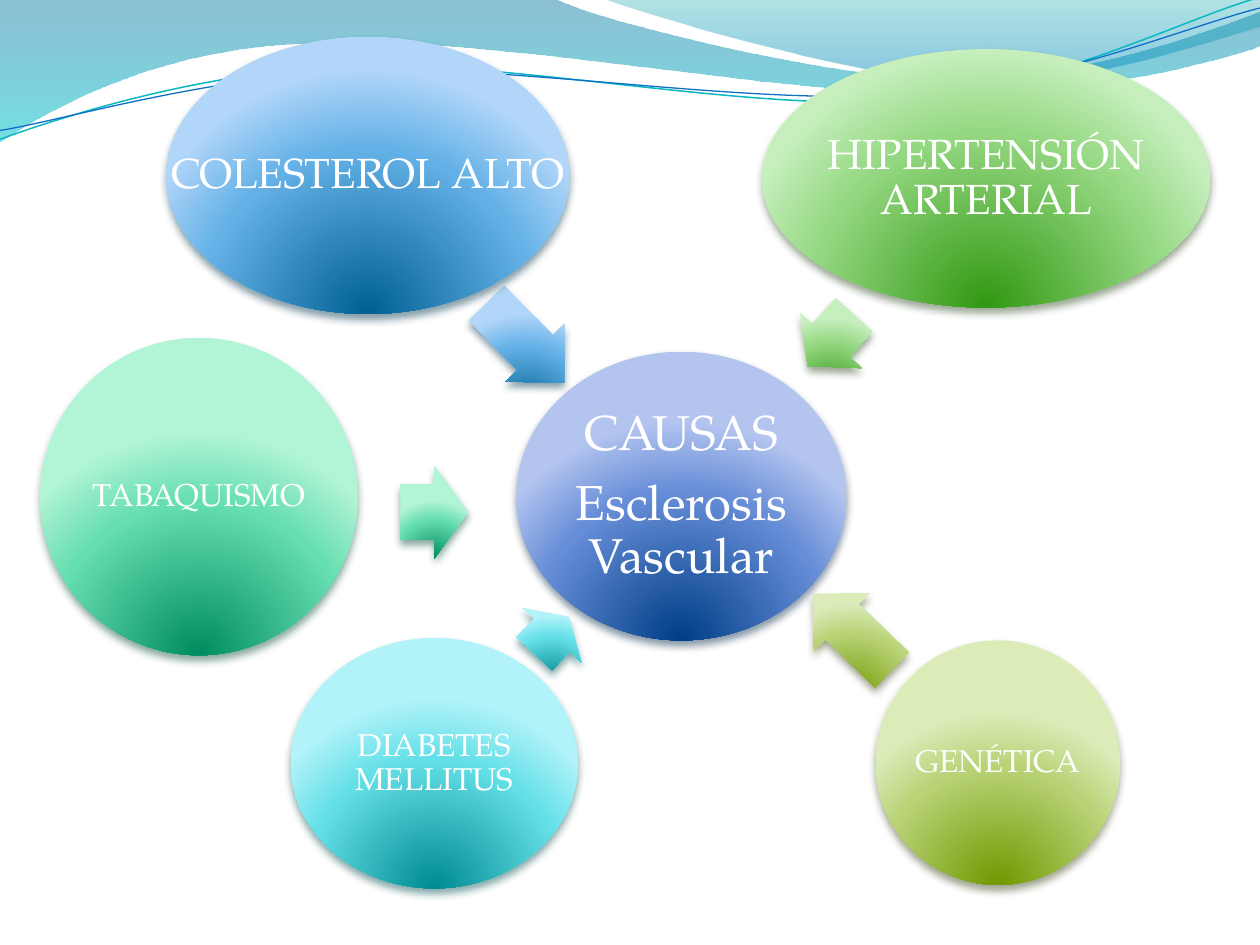
from lxml import etree
from pptx import Presentation
from pptx.dml.color import RGBColor
from pptx.enum.shapes import MSO_SHAPE
from pptx.enum.text import MSO_ANCHOR, PP_ALIGN
from pptx.util import Cm, Pt

OVAL, ARROW = MSO_SHAPE.OVAL, MSO_SHAPE.RIGHT_ARROW
MIDDLE, CENTER = MSO_ANCHOR.MIDDLE, PP_ALIGN.CENTER
NS = "http://schemas.openxmlformats.org/drawingml/2006/main"
FONT = "TeX Gyre Pagella"

LINEAR_DOWN = '<a:lin ang="5400000" scaled="0"/>'
GLOW_FROM_BELOW = ('<a:path path="circle"><a:fillToRect l="50000" t="130000" '
                   'r="50000" b="-30000"/></a:path>')

FRONT_WAVE = [(0, 0), (4.4, -0.01), (4.76, 0.17, 6.64, 0.63, 7.58, 0.63),
              (8.53, 0.63, 9.58, 0.26, 10, 0.09), (10.01, 0.36),
              (9.83, 0.44, 8.7, 0.76, 7.46, 0.75),
              (6.22, 0.75, 3.82, 0.28, 2.57, 0.34),
              (1.29, 0.36, 0.46, 0.83, -0.01, 1.13)]
RIGHT_WAVE = [(4.79, -0.01), (5.09, 0.11, 6.82, 0.62, 7.69, 0.65),
              (8.56, 0.69, 9.61, 0.32, 10, 0.21), (10, 0)]
STRAND_ANGLE = 357.3
TEAL_STRAND = [(-0.02, 0.87), (0.47, 0.72, 1.58, 0.41, 2.78, 0.42),
               (3.96, 0.42, 5.91, 0.93, 7.12, 0.9),
               (8.32, 0.87, 9.4, 0.36, 10, 0.22)]
BLUE_STRAND = [(-0.02, 0.8), (0.46, 0.75, 1.64, 0.45, 2.83, 0.46),
               (4.03, 0.46, 5.96, 0.89, 7.16, 0.85),
               (8.35, 0.83, 9.42, 0.42, 10.02, 0.3)]

BLUE = ("006091", "64B1E7", "B1D6F9", "00374C")
CYAN = ("008A91", "64DFE7", "B1F3F9", "024B4E")
MINT = ("008C60", "65DEB0", "B2F4D6", "044A37")
GREEN = ("319811", "95D882", "C6EFBD", "2B4821")
LIME = ("729800", "B8D275", "DBECB9", "3A4519")
NAVY = ("003D87", "668DD7", "B3C4EF", "042747")

CAUSES = [
    ("COLESTEROL ALTO", 24, BLUE, (2.54, 0, 8.13, 5.59), (8.66, 5.33, 2.24, 1.68), 45.7),
    ("DIABETES MELLITUS", 18, CYAN, (5.05, 12.12, 5.79, 5.05), (9.8, 11.25, 1.02, 1.63), 312.7),
    ("TABAQUISMO", 18, MINT, (0, 6.07, 6.4, 6.4), (7.26, 8.64, 1.37, 1.88), 359.9),
    ("HIPERTENSIÓN ARTERIAL", 24, GREEN, (14.55, 0.25, 9.04, 5.21), (15.24, 5.28, 1.4, 1.68), 132),
    ("GENÉTICA", 18, LIME, (16.84, 12.17, 4.93, 4.93), (15.27, 11.18, 2.21, 1.63), 224),
]


def color(hex_value):
    return RGBColor.from_string(hex_value)


def fill_gradient(shape, stops, direction):
    stop_xml = "".join(
        f'<a:gs pos="{position * 1000}"><a:srgbClr val="{hex_value}">'
        f'<a:alpha val="{alpha * 1000}"/></a:srgbClr></a:gs>'
        for position, hex_value, alpha in stops)
    gradient = etree.fromstring(
        f'<a:gradFill xmlns:a="{NS}" rotWithShape="0">'
        f'<a:gsLst>{stop_xml}</a:gsLst>{direction}</a:gradFill>')
    shape.fill.background()
    properties = shape._element.spPr
    properties.replace(properties.find(f"{{{NS}}}noFill"), gradient)


def cast_shadow(shape, hex_value):
    shape.shadow.inherit = False
    effects = shape._element.spPr.find(f"{{{NS}}}effectLst")
    effects.append(etree.fromstring(
        f'<a:outerShdw xmlns:a="{NS}" blurRad="{Pt(4.5)}" dist="{Pt(3)}" '
        f'dir="5400000" rotWithShape="0"><a:srgbClr val="{hex_value}">'
        '<a:alpha val="48000"/></a:srgbClr></a:outerShdw>'))


def bend_lines(curve, segments):
    lines = iter(list(curve._element.iter(f"{{{NS}}}lnTo")))
    for segment in segments[1:]:
        first = next(lines)
        if len(segment) == 6:
            bend = etree.Element(f"{{{NS}}}cubicBezTo")
            first.addprevious(bend)
            for line in (first, next(lines), next(lines)):
                bend.append(line[0])
                line.getparent().remove(line)


def add_curve(slide, box, segments, close):
    left, top, width = box
    points = [(Cm(left + segment[i] * width / 10), Cm(top + segment[i + 1] * width / 10))
              for segment in segments for i in range(0, len(segment), 2)]
    builder = slide.shapes.build_freeform(*points[0])
    builder.add_line_segments(points[1:], close=close)
    curve = builder.convert_to_shape()
    bend_lines(curve, segments)
    curve.shadow.inherit = False
    return curve


def add_waves(slide, box):
    for segments, stops in (
            (FRONT_WAVE, [(0, "0074A1", 45), (100, "00C6CF", 55)]),
            (RIGHT_WAVE, [(0, "00A1A9", 30), (80, "008BBF", 45)])):
        wave = add_curve(slide, box, segments, True)
        fill_gradient(wave, stops, LINEAR_DOWN)
        wave.line.fill.background()
    for segments, hex_value, weight in ((TEAL_STRAND, "0AB8BF", 0.85),
                                        (BLUE_STRAND, "0F6FC6", 0.75)):
        strand = add_curve(slide, box, segments, False)
        strand.rotation = STRAND_ANGLE
        strand.fill.background()
        strand.line.color.rgb = color(hex_value)
        strand.line.width = Pt(weight)


def place(origin, box):
    left, top, width, height = box
    return Cm(origin[0] + left), Cm(origin[1] + top), Cm(width), Cm(height)


def add_glossy(slide, kind, position, palette):
    dark, middle, light, shade = palette
    glossy = slide.shapes.add_shape(kind, *position)
    fill_gradient(glossy, [(0, dark, 100), (68, middle, 100), (100, light, 100)],
                  GLOW_FROM_BELOW)
    glossy.line.fill.background()
    cast_shadow(glossy, shade)
    return glossy


def add_bubble(slide, position, palette, lines, size, inset):
    add_glossy(slide, OVAL, position, palette)
    frame = slide.shapes.add_textbox(*position).text_frame
    frame.word_wrap = True
    frame.vertical_anchor = MIDDLE
    frame.margin_left = frame.margin_right = Cm(inset)
    frame.margin_top = frame.margin_bottom = Cm(inset)
    for index, line in enumerate(lines):
        paragraph = frame.add_paragraph() if index else frame.paragraphs[0]
        paragraph.alignment = CENTER
        paragraph.line_spacing = 0.9
        paragraph.space_after = Pt(0.35 * size)
        run = paragraph.add_run()
        run.text = line
        run.font.size = Pt(size)
        run.font.name = FONT
        run.font.color.rgb = color("FFFFFF")


def add_causes(slide, origin):
    add_bubble(slide, place(origin, (9.6, 6.35, 6.65, 5.82)), NAVY,
               ["CAUSAS", "Esclerosis Vascular"], 28, 0.1)
    for cause, size, palette, bubble_box, arrow_box, angle in CAUSES:
        arrow = add_glossy(slide, ARROW, place(origin, arrow_box), palette)
        arrow.adjustments[0] = 0.6
        arrow.adjustments[1] = 0.5
        arrow.rotation = angle
        add_bubble(slide, place(origin, bubble_box), palette, [cause], size, 0.07)


def main():
    presentation = Presentation()
    presentation.slide_width = Cm(25.4)
    presentation.slide_height = Cm(19.05)
    slide = presentation.slides.add_slide(presentation.slide_layouts[6])
    add_waves(slide, (0, 0, 25.4))
    add_causes(slide, (0.81, 0.74))
    presentation.save("out.pptx")


if __name__ == "__main__":
    main()
